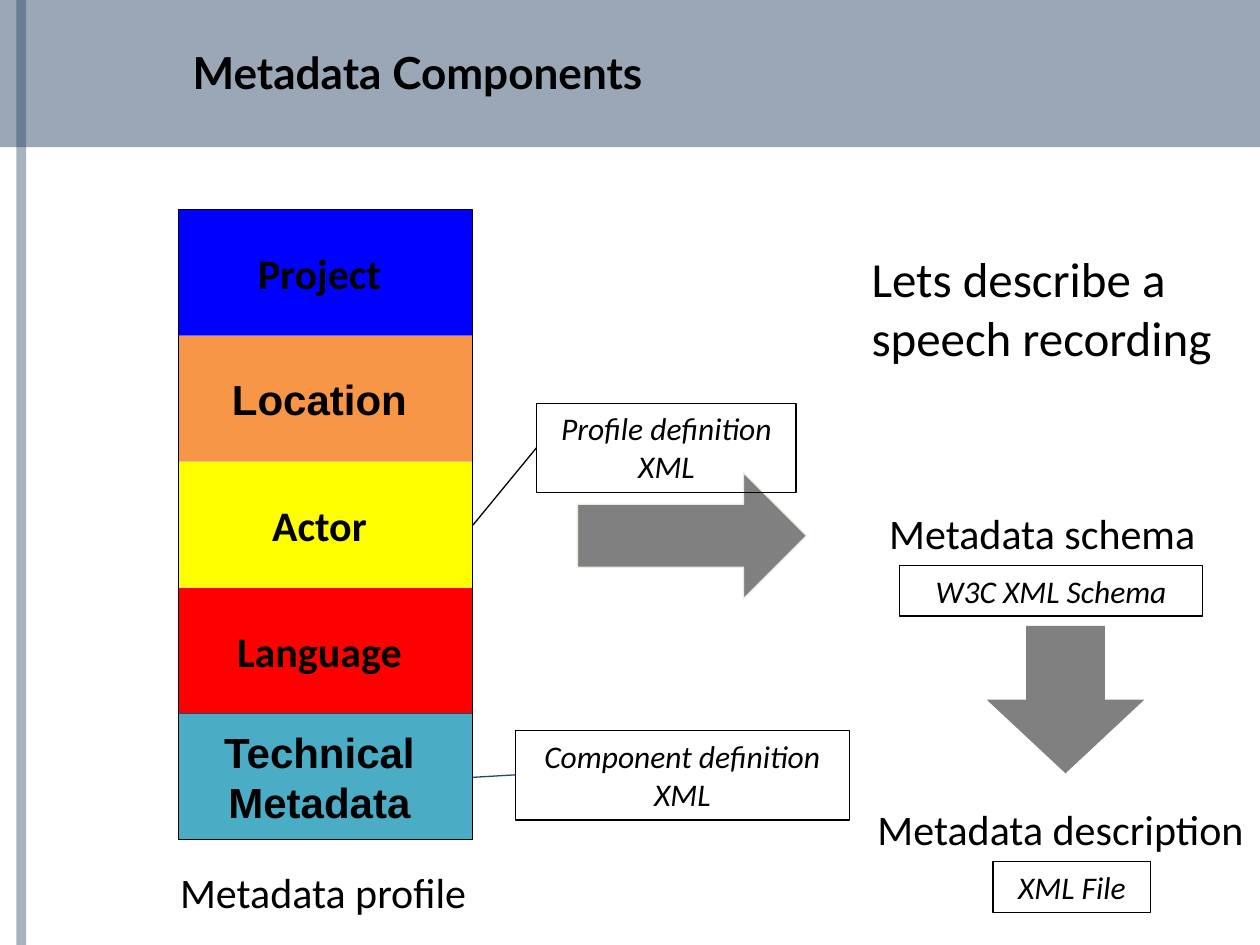
"""Build the Metadata Components slide."""
from lxml.etree import SubElement
from pptx import Presentation
from pptx.dml.color import RGBColor as RGB
from pptx.enum.shapes import MSO_CONNECTOR as LINK, MSO_SHAPE as KIND
from pptx.enum.text import MSO_ANCHOR as ANCHOR, MSO_AUTO_SIZE as FIT, PP_ALIGN as ALIGN
from pptx.oxml.ns import qn
from pptx.util import Cm, Pt

BLACK = RGB(0, 0, 0)
NAVY = RGB(0x25, 0x40, 0x61)
BLUE = RGB(0, 0, 0xFF)
ORANGE = RGB(0xF7, 0x96, 0x46)
YELLOW = RGB(0xFF, 0xFF, 0)
RED = RGB(0xFF, 0, 0)
TEAL = RGB(0x4B, 0xAC, 0xC6)
DARK = RGB(0x1F, 0x49, 0x7D)
GRAY = RGB(0x80, 0x80, 0x80)
CREAM = RGB(0xEE, 0xEC, 0xE1)


def write(shape, text, size=24, face="Calibri", bold=False, italic=False,
          align=ALIGN.CENTER, anchor=ANCHOR.TOP, wrap=False):
    frame = shape.text_frame
    frame.text = text
    frame.word_wrap = wrap
    frame.auto_size = FIT.NONE if wrap else FIT.SHAPE_TO_FIT_TEXT
    frame.vertical_anchor = anchor
    for para in frame.paragraphs:
        para.alignment = align
        font = para.runs[0].font
        font.size, font.name = Pt(size), face
        font.bold, font.italic = bold, italic
        font.color.rgb = BLACK


def draw(kind, place, fill=None, line=None):
    shape = shapes.add_shape(kind, *map(Cm, place))
    shape.shadow.inherit = False
    if fill is None:
        shape.fill.background()
    else:
        shape.fill.solid()
        shape.fill.fore_color.rgb = fill
    if line is None:
        shape.line.fill.background()
    else:
        shape.line.color.rgb = line
        shape.line.width = Pt(0.75)
    return shape


deck = Presentation()
deck.slide_width, deck.slide_height = Cm(25.4), Cm(19.05)
slide = deck.slides.add_slide(deck.slide_layouts[5])
shapes = slide.shapes
title = shapes.title

for place, alpha in [((0, 0, 25.4, 2.97), 46), ((0.33, 0, 0.2, 19.05), 40)]:
    band = draw(KIND.RECTANGLE, place, NAVY)
    color = band.fill._xPr.find(qn("a:solidFill"))[0]
    SubElement(color, qn("a:alpha"), val=str(alpha * 1000))
    title._element.addprevious(band._element)

title.left, title.top, title.width, title.height = map(Cm, (3.63, 0.76, 17.81, 1.37))
write(title, "Metadata Components", size=25.2, face="Lato", bold=True,
      align=ALIGN.LEFT, anchor=ANCHOR.MIDDLE, wrap=True)

LEFT, TOP, WIDE, STEP = 3.6, 4.23, 5.93, 2.54
parts = [
    ("Project", BLUE, None, "Calibri"),
    ("Location", ORANGE, None, "Arial"),
    ("Actor", YELLOW, None, "Calibri"),
    ("Language", RED, None, "Calibri"),
    ("Technical\nMetadata", TEAL, DARK, "Arial"),
]
for row, (text, fill, line, face) in enumerate(parts):
    part = draw(KIND.RECTANGLE, (LEFT, TOP + row * STEP, WIDE, STEP), fill, line)
    part.text_frame.margin_left = 0
    write(part, text, face=face, bold=True, anchor=ANCHOR.MIDDLE, wrap=True)
draw(KIND.RECTANGLE, (LEFT, TOP, WIDE, STEP * len(parts)), line=BLACK)

draw(KIND.RIGHT_ARROW, (11.64, 9.53, 4.62, 2.54), GRAY, CREAM)
draw(KIND.DOWN_ARROW, (19.89, 12.62, 3.18, 2.97), GRAY)

labels = [
    ("Metadata schema", (17.35, 10.11, 7.32, 2.31), 24, ALIGN.CENTER),
    ("Metadata description", (17.15, 16.08, 8.46, 2.31), 24, ALIGN.CENTER),
    ("Lets describe a\nspeech recording", (17.32, 4.88, 8.15, 2.64), 28, ALIGN.LEFT),
    ("Metadata profile", (3.38, 17.35, 6.65, 1.3), 24, ALIGN.LEFT),
]
for text, place, size, align in labels:
    write(shapes.add_textbox(*map(Cm, place)), text, size=size, align=align)

notes = [
    ("Component definition\nXML", (10.39, 14.73, 6.73, 1.8)),
    ("W3C XML Schema", (18.14, 11.4, 6.1, 1.02)),
    ("XML File", (20.02, 17.37, 3.18, 1.02)),
    ("Profile definition\nXML", (10.82, 8.13, 5.23, 1.8)),
]
for text, place in notes:
    write(draw(KIND.RECTANGLE, place, line=BLACK), text, size=18, italic=True)

for ends, color in [((9.53, 15.67, 10.39, 15.62), DARK), ((9.53, 10.59, 10.82, 9.02), BLACK)]:
    link = shapes.add_connector(LINK.STRAIGHT, *map(Cm, ends))
    link.line.color.rgb = color
    link.line.width = Pt(0.75)
    SubElement(link._element.spPr, qn("a:effectLst"))

deck.save("out.pptx")
